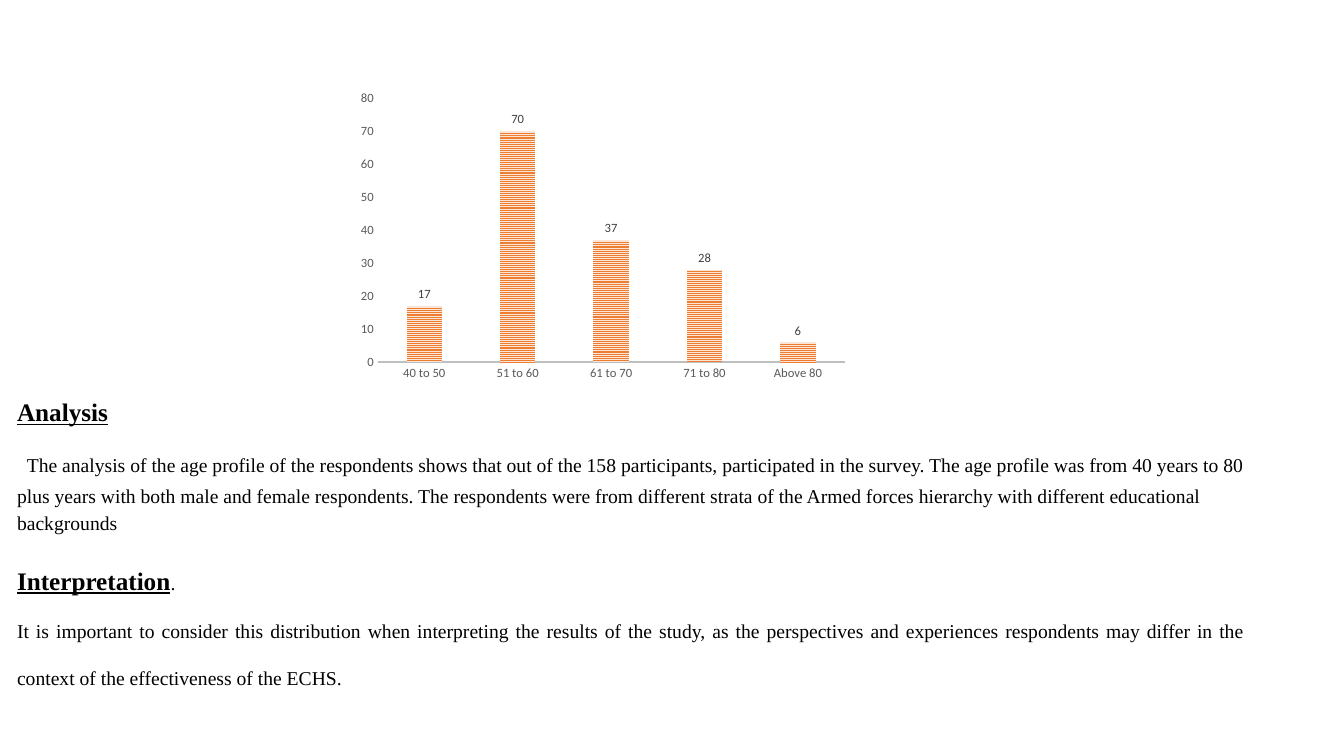
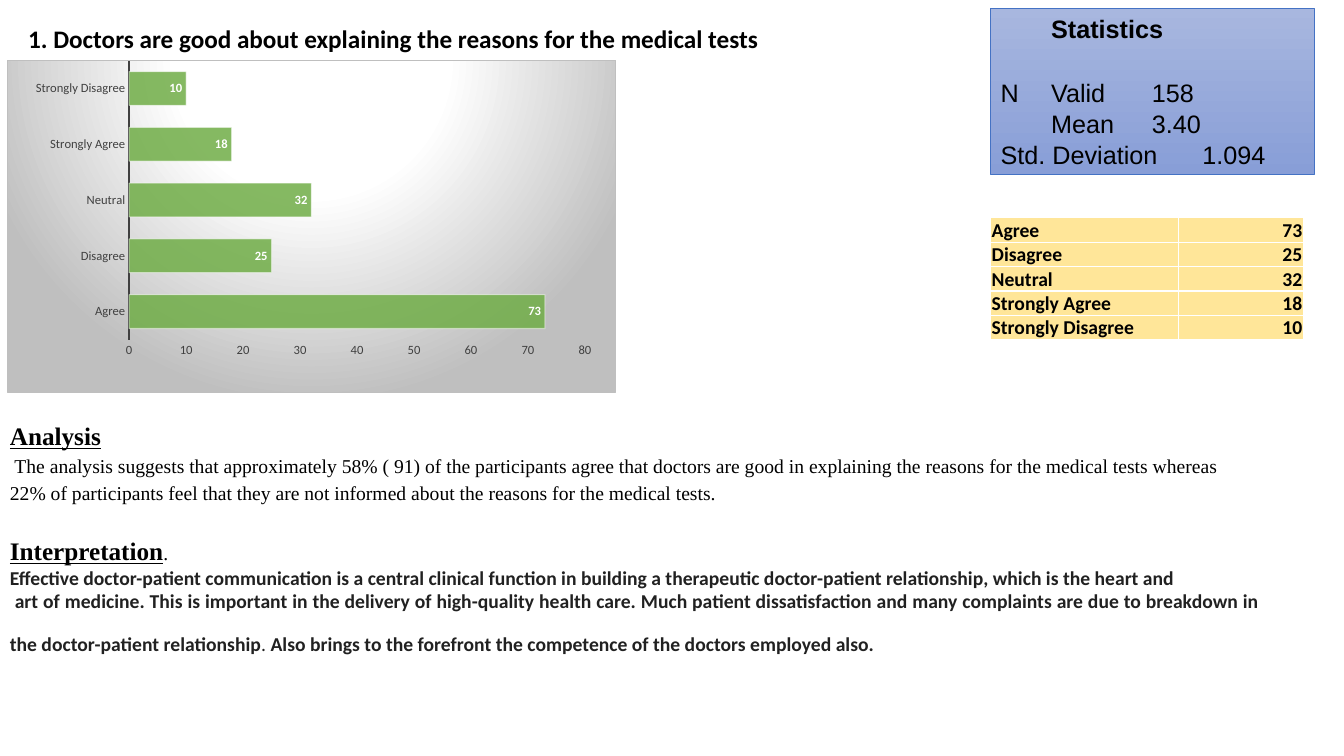
from pptx import Presentation
from pptx.chart.data import CategoryChartData
from pptx.dml.color import RGBColor
from pptx.enum.chart import XL_CHART_TYPE, XL_LABEL_POSITION, XL_TICK_MARK
from pptx.enum.dml import MSO_PATTERN
from pptx.enum.shapes import MSO_SHAPE
from pptx.enum.text import MSO_ANCHOR, PP_ALIGN
from pptx.oxml import parse_xml
from pptx.oxml.ns import nsdecls, qn
from pptx.util import Cm, Pt
from lxml.etree import SubElement

HUES = {
    "black": "000000", "white": "FFFFFF", "ink": "212121",
    "grey": "595959", "dark": "404040", "rule": "BFBFBF",
    "orange": "ED7D31", "peach": "FBE5D6", "green": "70AD47",
    "sky": "A8B7DF", "blue": "889ED7", "edge": "4472C4", "sand": "FFE699",
}
RGB = {name: RGBColor.from_string(code) for name, code in HUES.items()}

SERIF = {"name": "Times New Roman", "size": Pt(14)}
HEAD = SERIF | {"size": Pt(18), "bold": True, "underline": True}
WIDE = SERIF | {"size": Pt(28)}
SANS = {"name": "Calibri", "size": Pt(14), "hue": "ink"}
BOLD = SANS | {"bold": True}
TITLE = {"name": "Calibri", "size": Pt(18), "bold": True}
CELL = TITLE | {"size": Pt(14)}
STAT = {"name": "Arial", "size": Pt(18)}

LOOSE = {"line_spacing": 1.15}
JUST = {"alignment": PP_ALIGN.JUSTIFY}
DOUBLE = JUST | {"line_spacing": 2.0}
ROW = {"line_spacing": Pt(22)}


def write(frame, paras):
    """Fill a text frame from (paragraph format, [(text, font format)]) pairs."""
    frame.word_wrap = True
    for i, (form, runs) in enumerate(paras):
        para = frame.paragraphs[0] if i == 0 else frame.add_paragraph()
        for key, value in ({"alignment": PP_ALIGN.LEFT} | form).items():
            setattr(para, key, value)
        for text, style in runs:
            run = para.add_run()
            run.text = text
            run.font.color.rgb = RGB[style.get("hue", "black")]
            for key, value in style.items():
                if key != "hue":
                    setattr(run.font, key, value)


def plot(slide, kind, box, data, look):
    """Add a one-series bar chart without title, legend or gridlines."""
    source = CategoryChartData()
    source.categories = list(data)
    source.add_series("Series 1", list(data.values()))
    chart = slide.shapes.add_chart(kind, *map(Cm, box), source).chart
    chart.has_title = chart.has_legend = False
    chart.font.name, chart.font.size = "Calibri", Pt(10)
    for axis in (chart.category_axis, chart.value_axis):
        axis.major_tick_mark = axis.minor_tick_mark = XL_TICK_MARK.NONE
        axis.has_major_gridlines = False
        font = axis.tick_labels.font
        font.name, font.size = "Calibri", Pt(9)
        font.color.rgb = RGB[look["text"]]
    chart.value_axis.format.line.fill.background()
    chart.value_axis.maximum_scale = 80
    chart.value_axis.minimum_scale = 0
    chart.value_axis.major_unit = 10
    line = chart.category_axis.format.line
    line.color.rgb, line.width = RGB[look["axis"]], Pt(1.5)
    bars = chart.plots[0]
    bars.vary_by_categories = False
    bars.gap_width, bars.overlap = look["gap"], look["overlap"]
    bars.has_data_labels = True
    labels = bars.data_labels
    labels.show_value, labels.position = True, look["place"]
    labels.font.name, labels.font.size = "Calibri", Pt(9)
    labels.font.bold = look["bold"]
    labels.font.color.rgb = RGB[look["label"]]
    return chart


deck = Presentation()
deck.slide_width, deck.slide_height = Cm(33.87), Cm(19.05)
blank = deck.slide_layouts[6]

# Age profile
slide = deck.slides.add_slide(blank)
ages = {"40 to 50": 17, "51 to 60": 70, "61 to 70": 37, "71 to 80": 28, "Above 80": 6}
chart = plot(slide, XL_CHART_TYPE.COLUMN_CLUSTERED, (8.84, 2.13, 12.7, 7.62), ages, {
    "text": "grey", "axis": "rule", "gap": 164, "overlap": -22,
    "place": XL_LABEL_POSITION.OUTSIDE_END, "bold": False, "label": "dark"})
fill = chart.plots[0].series[0].format.fill
fill.patterned()
fill.pattern = MSO_PATTERN.NARROW_HORIZONTAL
fill.fore_color.rgb, fill.back_color.rgb = RGB["orange"], RGB["peach"]

frame = slide.shapes.add_textbox(Cm(0.18), Cm(9.75), Cm(32.94), Cm(9.09)).text_frame
frame.margin_right = Cm(1.72)
write(frame, [
    (LOOSE, [("Analysis", HEAD)]),
    (LOOSE, [(" ", WIDE), (
        "The analysis of the age profile of the respondents shows that out of the 158 "
        "participants, participated in the survey. The age profile was from 40 years to 80 "
        "plus years with both male and female respondents. The respondents were from "
        "different strata of the Armed forces hierarchy with different educational "
        "backgrounds", SERIF)]),
    (DOUBLE, [("Interpretation", HEAD), (".", SERIF)]),
    (DOUBLE, [(
        "It is important to consider this distribution when interpreting the results of the "
        "study, as the perspectives and experiences respondents may differ in the context "
        "of the effectiveness of the ECHS.", SERIF)]),
])

# Doctors explain tests
slide = deck.slides.add_slide(blank)
votes = {"Agree": 73, "Disagree": 25, "Neutral": 32, "Strongly Agree": 18,
         "Strongly Disagree": 10}
chart = plot(slide, XL_CHART_TYPE.BAR_CLUSTERED, (0.18, 1.5, 15.34, 8.41), votes, {
    "text": "dark", "axis": "dark", "gap": 65, "overlap": 0,
    "place": XL_LABEL_POSITION.INSIDE_END, "bold": True, "label": "white"})
form = chart.plots[0].series[0].format
form.fill.solid()
form.fill.fore_color.rgb = RGB["green"]
form.line.color.rgb, form.line.width = RGB["white"], Pt(0.75)
shades = chart.plots[0].series[0]._element.find(qn("c:spPr")).iter(qn("a:srgbClr"))
for shade, alpha in zip(list(shades), (85000, 50000)):
    SubElement(shade, qn("a:alpha")).set("val", str(alpha))

stops = "".join(
    f'<a:gs pos="{pos}"><a:srgbClr val="{HUES[hue]}"/></a:gs>'
    for pos, hue in ((0, "white"), (39000, "white"), (100000, "rule")))
space = chart._chartSpace
space.find(qn("c:chart")).addnext(parse_xml(
    f'<c:spPr {nsdecls("c", "a")}><a:gradFill><a:gsLst>{stops}</a:gsLst>'
    '<a:path path="circle"><a:fillToRect l="50000" t="-80000" r="50000" b="180000"/>'
    f'</a:path></a:gradFill><a:ln w="{Pt(0.75)}"><a:solidFill>'
    f'<a:srgbClr val="{HUES["rule"]}"/></a:solidFill></a:ln></c:spPr>'))
area = space.find(qn("c:chart")).find(qn("c:plotArea"))
for old in area.findall(qn("c:layout")):
    area.remove(old)
layout = parse_xml(f'<c:layout {nsdecls("c")}><c:manualLayout/></c:layout>')
for tag, value in (("layoutTarget", "inner"), ("xMode", "edge"), ("yMode", "edge"),
                   ("x", 0.2), ("y", 0), ("w", 0.75), ("h", 0.84)):
    SubElement(layout[0], qn("c:" + tag)).set("val", str(value))
area.insert(0, layout)

frame = slide.shapes.add_textbox(Cm(0.46), Cm(0.46), Cm(24.26), Cm(1.02)).text_frame
write(frame, [({}, [(
    "1. Doctors are good about explaining the reasons for the medical tests", TITLE)])])

panel = slide.shapes.add_shape(
    MSO_SHAPE.RECTANGLE, Cm(24.97), Cm(0.2), Cm(8.15), Cm(4.19))
panel.shadow.inherit = False
panel.line.color.rgb, panel.line.width = RGB["edge"], Pt(0.5)
panel.fill.gradient()
panel.fill.gradient_angle = 270
for stop, hue in zip(panel.fill.gradient_stops, ("sky", "blue")):
    stop.color.rgb = RGB[hue]
frame = panel.text_frame
frame.vertical_anchor = MSO_ANCHOR.MIDDLE
write(frame, [
    (ROW, [("Statistics", STAT | {"bold": True})]),
    (ROW | {"space_before": Pt(24)}, [("N\tValid\t158", STAT)]),
    (ROW, [("\tMean\t3.40", STAT)]),
    (ROW, [("Std. Deviation\t1.094", STAT)]),
])
frame.paragraphs[0]._p.get_or_add_pPr().set("marL", str(Cm(1.27)))

frame = slide.shapes.add_textbox(Cm(0), Cm(10.36), Cm(33.48), Cm(6.48)).text_frame
frame.margin_right = Cm(1.72)
write(frame, [
    (LOOSE, [("Analysis", HEAD)]),
    (LOOSE, [(
        " The analysis suggests that approximately 58% ( 91) of the participants agree that "
        "doctors are good in explaining the reasons for the medical tests whereas 22% of "
        "participants feel that they are not informed about the reasons for the medical "
        "tests.", SERIF)]),
    (LOOSE | {"space_before": Pt(18.5)}, [("Interpretation", HEAD), (".", SERIF)]),
    (JUST, [(
        "Effective doctor-patient communication is a central clinical function in building "
        "a therapeutic doctor-patient relationship, which is the heart and", BOLD)]),
    (JUST, [(
        " art of medicine. This is important in the delivery of high-quality health care. "
        "Much patient dissatisfaction and many complaints are due to breakdown in the "
        "doctor-patient relationship", BOLD),
        (". ", SANS),
        ("Also brings to the forefront the competence of the doctors employed also.", BOLD),
        (" ", SANS | {"size": Pt(28)})]),
])

table = slide.shapes.add_table(
    len(votes), 2, Cm(24.97), Cm(5.49), Cm(7.87), Cm(3.07)).table
table.first_row = table.horz_banding = False
table.columns[0].width, table.columns[1].width = Cm(4.72), Cm(3.15)
for r, pair in enumerate(votes.items()):
    for c, (value, side) in enumerate(zip(pair, (PP_ALIGN.LEFT, PP_ALIGN.RIGHT))):
        cell = table.cell(r, c)
        cell.vertical_anchor = MSO_ANCHOR.BOTTOM
        cell.margin_left = cell.margin_right = cell.margin_top = Cm(0.02)
        cell.margin_bottom = 0
        for edge in "LRTB":
            cell._tc.get_or_add_tcPr().append(parse_xml(
                f'<a:ln{edge} {nsdecls("a")} w="{Pt(1)}"><a:solidFill>'
                f'<a:srgbClr val="{HUES["white"]}"/></a:solidFill></a:ln{edge}>'))
        cell.fill.solid()
        cell.fill.fore_color.rgb = RGB["sand"]
        write(cell.text_frame, [({"alignment": side}, [(str(value), CELL)])])

deck.save("out.pptx")
